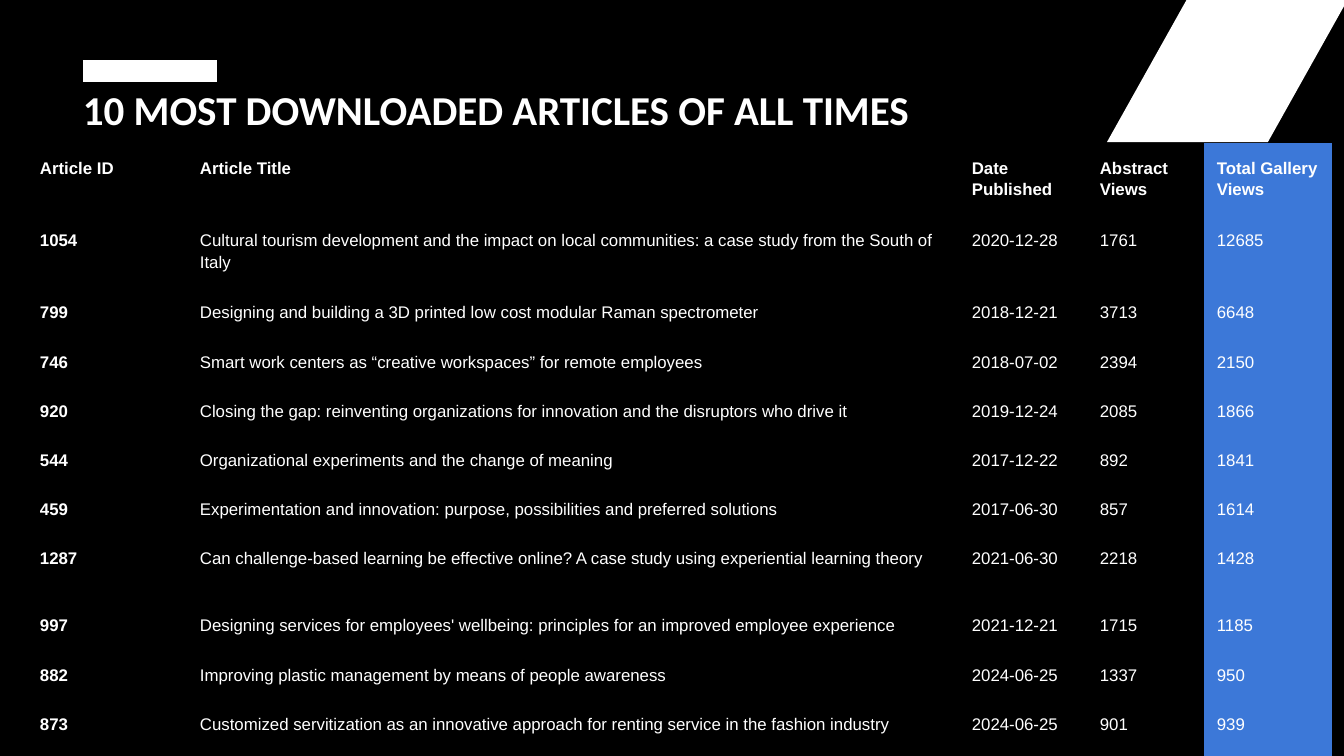
from typing import NamedTuple

from lxml.etree import SubElement
from pptx import Presentation
from pptx.dml.color import RGBColor
from pptx.enum.shapes import MSO_CONNECTOR, MSO_SHAPE
from pptx.enum.text import MSO_ANCHOR
from pptx.oxml.ns import qn
from pptx.util import Emu, Pt

EMU_PER_PX = 914400 / 134.4
SLIDE_WIDTH, SLIDE_HEIGHT = 1344, 756

BLACK = RGBColor(0x00, 0x00, 0x00)
WHITE = RGBColor(0xFF, 0xFF, 0xFF)
BLUE = RGBColor(0x3C, 0x78, 0xD8)

NO_STYLE_NO_GRID = "{2D5ABB26-0587-4C30-8999-92F81FD0307C}"
CELL_MARGIN = 13
ROW_HEIGHT = 48
TALL_ROWS = {0: 70, 1: 70, 7: 67, 10: 69}


class Column(NamedTuple):
    heading: str
    width: int
    bold: bool = False
    fill: RGBColor | None = None


class Article(NamedTuple):
    number: str
    title: str
    published: str
    abstract_views: str
    gallery_views: str


COLUMNS = [
    Column("Article ID", 160, bold=True),
    Column("Article Title", 772),
    Column("Date Published", 128),
    Column("Abstract Views", 117),
    Column("Total Gallery Views", 128, fill=BLUE),
]

ARTICLES = [
    Article("1054", "Cultural tourism development and the impact on local communities: "
            "a case study from the South of Italy", "2020-12-28", "1761", "12685"),
    Article("799", "Designing and building a 3D printed low cost modular Raman spectrometer",
            "2018-12-21", "3713", "6648"),
    Article("746", "Smart work centers as “creative workspaces” for remote employees",
            "2018-07-02", "2394", "2150"),
    Article("920", "Closing the gap: reinventing organizations for innovation "
            "and the disruptors who drive it", "2019-12-24", "2085", "1866"),
    Article("544", "Organizational experiments and the change of meaning",
            "2017-12-22", "892", "1841"),
    Article("459", "Experimentation and innovation: purpose, possibilities "
            "and preferred solutions", "2017-06-30", "857", "1614"),
    Article("1287", "Can challenge-based learning be effective online? "
            "A case study using experiential learning theory", "2021-06-30", "2218", "1428"),
    Article("997", "Designing services for employees' wellbeing: principles "
            "for an improved employee experience", "2021-12-21", "1715", "1185"),
    Article("882", "Improving plastic management by means of people awareness",
            "2024-06-25", "1337", "950"),
    Article("873", "Customized servitization as an innovative approach "
            "for renting service in the fashion industry", "2024-06-25", "901", "939"),
]


def px(length: int) -> Emu:
    return Emu(round(length * EMU_PER_PX))


def write(frame, text: str, *, font: str, size: int, bold: bool) -> None:
    """Put one white, left-aligned paragraph into a text frame."""
    para = frame.paragraphs[0]
    para.line_spacing = 1.15
    span = para.add_run()
    span.text = text
    span.font.name = font
    span.font.size = Pt(size)
    span.font.bold = bold
    span.font.color.rgb = WHITE


def add_filled_shape(page, kind: MSO_SHAPE, left: int, top: int, width: int, height: int,
                     fill: RGBColor):
    shape = page.shapes.add_shape(kind, px(left), px(top), px(width), px(height))
    shape.shadow.inherit = False
    shape.fill.solid()
    shape.fill.fore_color.rgb = fill
    shape.line.fill.background()
    return shape


def add_title_bar(page) -> None:
    bar = page.shapes.add_connector(MSO_CONNECTOR.STRAIGHT, px(83), px(71), px(217), px(71))
    bar.line.color.rgb = WHITE
    bar.line.width = Pt(12)
    SubElement(bar._element.spPr, qn("a:effectLst"))


def add_title(page, text: str) -> None:
    box = page.shapes.add_textbox(px(83), px(70), px(997), px(83))
    frame = box.text_frame
    frame.word_wrap = True
    frame.margin_left = 0
    frame.vertical_anchor = MSO_ANCHOR.TOP
    write(frame, text, font="Calibri", size=22, bold=True)


def add_article_table(page) -> None:
    rows = [[column.heading for column in COLUMNS], *ARTICLES]
    heights = [TALL_ROWS.get(index, ROW_HEIGHT) for index in range(len(rows))]
    holder = page.shapes.add_table(len(rows), len(COLUMNS), px(27), px(143),
                                   px(sum(column.width for column in COLUMNS)),
                                   px(sum(heights)))
    table = holder.table
    table.first_row = table.horz_banding = False
    table._tbl.tblPr.find(qn("a:tableStyleId")).text = NO_STYLE_NO_GRID

    for index, column in enumerate(COLUMNS):
        table.columns[index].width = px(column.width)
    for row_index, (height, texts) in enumerate(zip(heights, rows)):
        table.rows[row_index].height = px(height)
        for column_index, (column, text) in enumerate(zip(COLUMNS, texts)):
            cell = table.cell(row_index, column_index)
            cell.margin_left = cell.margin_right = px(CELL_MARGIN)
            cell.margin_top = cell.margin_bottom = px(CELL_MARGIN)
            if column.fill is None:
                cell.fill.background()
            else:
                cell.fill.solid()
                cell.fill.fore_color.rgb = column.fill
            write(cell.text_frame, text, font="Arial", size=9,
                  bold=column.bold or row_index == 0)


def main() -> None:
    deck = Presentation()
    deck.slide_width, deck.slide_height = px(SLIDE_WIDTH), px(SLIDE_HEIGHT)
    page = deck.slides.add_slide(deck.slide_layouts[6])

    add_filled_shape(page, MSO_SHAPE.RECTANGLE, 0, 0, SLIDE_WIDTH, SLIDE_HEIGHT, BLACK)
    corner = add_filled_shape(page, MSO_SHAPE.PARALLELOGRAM, 1107, -1, 241, 143, WHITE)
    corner.adjustments[0] = 0.56
    add_title_bar(page)
    add_title(page, "10 MOST DOWNLOADED ARTICLES OF ALL TIMES")
    add_article_table(page)

    deck.save("out.pptx")


if __name__ == "__main__":
    main()
